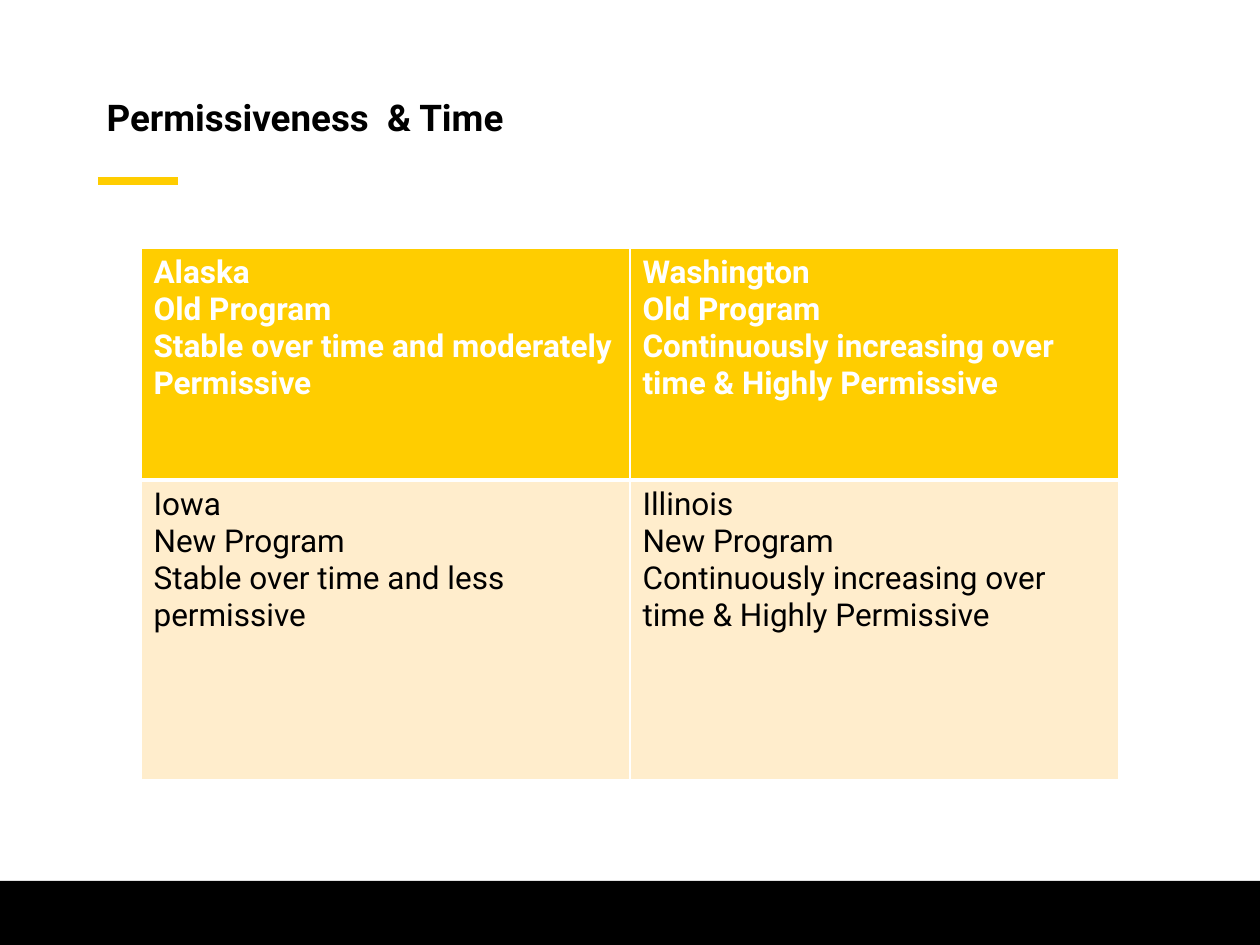
import pptx
import pptx.util
import pptx.dml.color
import pptx.enum.shapes
import pptx.enum.text
import pptx.oxml
import pptx.oxml.ns

RGBColor = pptx.dml.color.RGBColor
BLACK = RGBColor(0x00, 0x00, 0x00)
WHITE = RGBColor(0xFF, 0xFF, 0xFF)
YELLOW = RGBColor(0xFF, 0xCD, 0x00)
CREAM = RGBColor(0xFF, 0xED, 0xCC)

EMU_PER_PX = 914400 / 126


def px(length):
    return pptx.util.Emu(round(length * EMU_PER_PX))


class SlideBuilder:
    """Holds the style and the current slide."""

    font_name = "Roboto"

    def __init__(self, presentation):
        # Layout 5 is "Title Only"
        self.slide = presentation.slides.add_slide(presentation.slide_layouts[5])

    def format_text(self, text_frame, text, size, color, bold):
        text_frame.text = text
        font_format = {"name": self.font_name, "size": pptx.util.Pt(size), "bold": bold}
        for paragraph in text_frame.paragraphs:
            paragraph.alignment = pptx.enum.text.PP_ALIGN.LEFT
            for run in paragraph.runs:
                for name, value in font_format.items():
                    setattr(run.font, name, value)
                run.font.color.rgb = color

    def title(self, text, left, top, width, height):
        shape = self.slide.shapes.title
        box = {"left": left, "top": top, "width": width, "height": height}
        for name, value in box.items():
            setattr(shape, name, px(value))
        self.format_text(shape.text_frame, text, 21, BLACK, True)
        frame_format = {
            "word_wrap": True,
            "auto_size": pptx.enum.text.MSO_AUTO_SIZE.NONE,
            "vertical_anchor": pptx.enum.text.MSO_ANCHOR.MIDDLE,
        }
        for name, value in frame_format.items():
            setattr(shape.text_frame, name, value)
        shape.text_frame.paragraphs[0].line_spacing = 0.9

    def line(self, x1, y1, x2, y2, color, width):
        connector = self.slide.shapes.add_connector(
            pptx.enum.shapes.MSO_CONNECTOR.STRAIGHT, px(x1), px(y1), px(x2), px(y2))
        connector.line.color.rgb = color
        connector.line.width = pptx.util.Pt(width)
        properties = connector._element.spPr
        properties.append(pptx.oxml.parse_xml(
            f"<a:effectLst {pptx.oxml.ns.nsdecls('a')}/>"))

    def rectangle(self, left, top, width, height, color):
        shape = self.slide.shapes.add_shape(
            pptx.enum.shapes.MSO_SHAPE.RECTANGLE,
            px(left), px(top), px(width), px(height))
        shape.shadow.inherit = False
        shape.fill.solid()
        shape.fill.fore_color.rgb = color
        shape.line.fill.background()

    def cell_borders(self, cell, color, widths):
        properties = cell._tc.get_or_add_tcPr()
        # Borders come before the fill, in the order L, R, T, B
        for index, side in enumerate("LRTB"):
            width = pptx.util.Pt(widths.get(side, 1))
            properties.insert(index, pptx.oxml.parse_xml(
                f"<a:ln{side} {pptx.oxml.ns.nsdecls('a')} w='{width}'>"
                f"<a:solidFill><a:srgbClr val='{color}'/></a:solidFill></a:ln{side}>"))

    def table(self, left, top, column_widths, row_heights, texts, row_styles):
        table = self.slide.shapes.add_table(
            len(row_heights), len(column_widths), px(left), px(top),
            px(sum(column_widths)), px(sum(row_heights))).table
        for column, width in zip(table.columns, column_widths):
            column.width = px(width)
        for row, height, row_texts, style in zip(table.rows, row_heights, texts, row_styles):
            row.height = px(height)
            for cell, text in zip(row.cells, row_texts):
                cell.fill.solid()
                cell.fill.fore_color.rgb = style["fill"]
                self.format_text(cell.text_frame, text, 18, style["color"], style["bold"])
                self.cell_borders(cell, WHITE, style["borders"])


def main():
    presentation = pptx.Presentation()
    presentation.slide_width = px(1260)
    presentation.slide_height = px(945)
    builder = SlideBuilder(presentation)

    # Accent line and footer band
    builder.line(98, 181, 178, 181, YELLOW, 5)
    builder.rectangle(0, 881, 1260, 64, BLACK)

    # States by program age and permissiveness
    increasing = "Continuously increasing over time & Highly Permissive"
    texts = [
        ["Alaska\nOld Program\nStable over time and moderately Permissive",
         f"Washington\nOld Program\n{increasing}"],
        ["Iowa\nNew Program\nStable over time and less permissive",
         f"Illinois\nNew Program\n{increasing}"],
    ]
    row_styles = [
        {"fill": YELLOW, "color": WHITE, "bold": True, "borders": {"B": 3}},
        {"fill": CREAM, "color": BLACK, "bold": False, "borders": {"T": 3}},
    ]
    builder.table(141, 248, [489, 489], [232, 300], texts, row_styles)

    # Title
    builder.title("Permissiveness  & Time", 94, 76, 805, 88)

    presentation.save("out.pptx")


if __name__ == "__main__":
    main()
